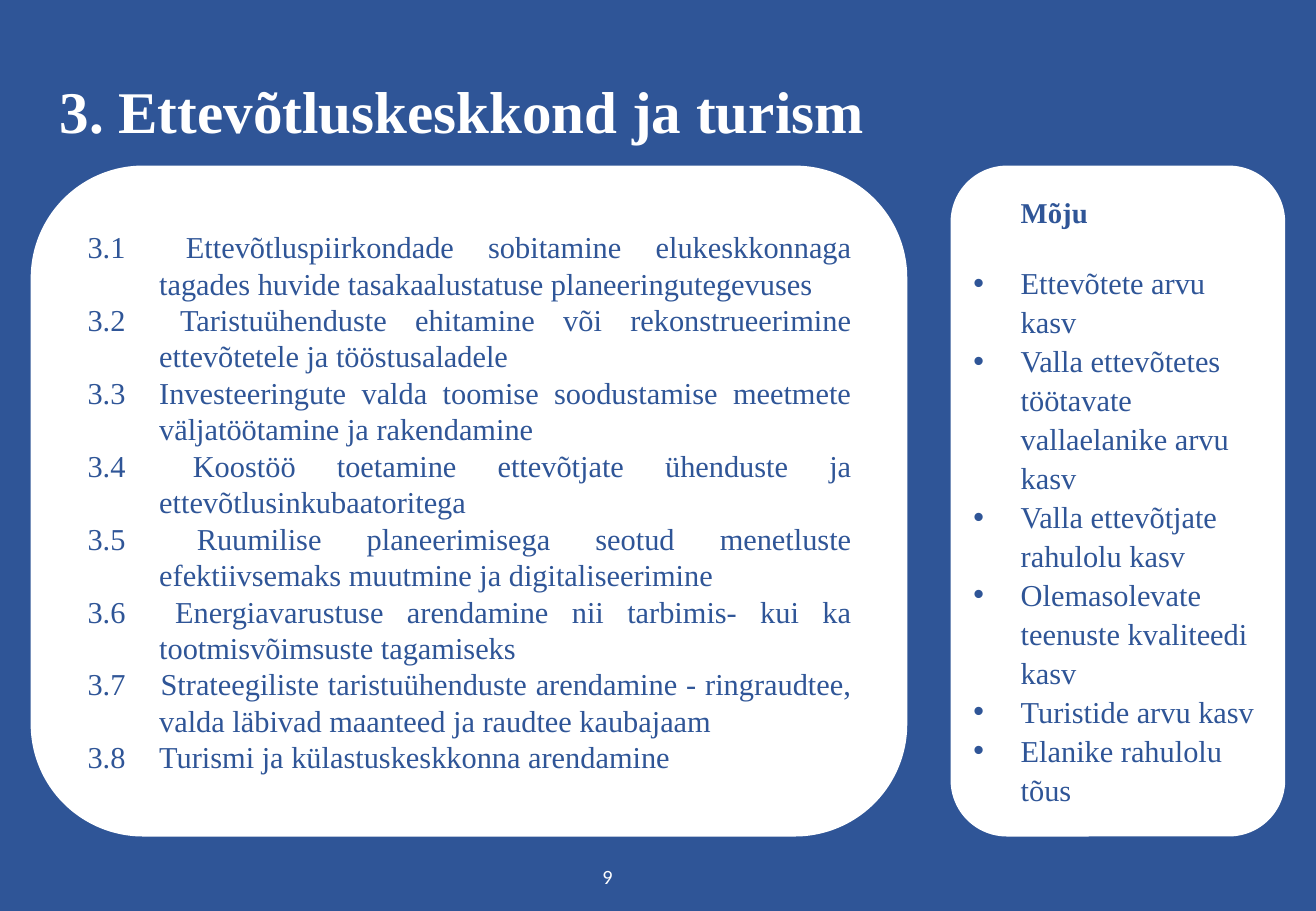
from dataclasses import dataclass

from lxml import etree
from pptx import Presentation
from pptx import util as u
from pptx.dml.color import RGBColor
from pptx.enum import shapes, text
from pptx.oxml import ns

BLUE = "2F5597"
WHITE = "FFFFFF"
SERIF = "Times New Roman"
PANEL_TOP = 1.37
PANEL_HEIGHT = 5.51


@dataclass
class Box:
    left: float
    top: float
    width: float
    height: float

    def lengths(self) -> tuple:
        return tuple(u.Inches(n) for n in (self.left, self.top, self.width, self.height))


@dataclass
class Line:
    words: str
    size: float = 18
    color: str = BLUE
    font: str = SERIF
    bold: bool = False
    align: text.PP_ALIGN = text.PP_ALIGN.LEFT
    indent: float = 0
    hanging: bool = False
    bullet: bool = False
    spacing: float = 1
    after: float = 0


@dataclass
class Panel:
    outline: Box
    words: Box
    lines: list[Line]


ACTIONS = [
    "3.1 \tEttevõtluspiirkondade sobitamine elukeskkonnaga tagades huvide tasakaalustatuse planeeringutegevuses",
    "3.2 \tTaristuühenduste ehitamine või rekonstrueerimine ettevõtetele ja tööstusaladele",
    "3.3\tInvesteeringute valda toomise soodustamise meetmete väljatöötamine ja rakendamine",
    "3.4 \tKoostöö toetamine ettevõtjate ühenduste ja ettevõtlusinkubaatoritega",
    "3.5 \tRuumilise planeerimisega seotud menetluste efektiivsemaks muutmine ja digitaliseerimine",
    "3.6 \tEnergiavarustuse arendamine nii tarbimis- kui ka tootmisvõimsuste tagamiseks",
    "3.7 \tStrateegiliste taristuühenduste arendamine - ringraudtee, valda läbivad maanteed ja raudtee kaubajaam",
    "3.8\tTurismi ja külastuskeskkonna arendamine",
]
IMPACTS = [
    "Ettevõtete arvu kasv",
    "Valla ettevõtetes töötavate vallaelanike arvu kasv",
    "Valla ettevõtjate rahulolu kasv",
    "Olemasolevate teenuste kvaliteedi kasv",
    "Turistide arvu kasv",
    "Elanike rahulolu tõus",
]

action_lines = [
    Line(action, align=text.PP_ALIGN.JUSTIFY, indent=0.59, hanging=True)
    for action in ACTIONS
]
impact_lines = [Line("Mõju", size=17, bold=True, indent=0.39, after=19.5)] + [
    Line(impact, indent=0.39, hanging=True, bullet=True, spacing=1.07)
    for impact in IMPACTS
]
impact_lines[-1].after = 8

PANELS = [
    Panel(Box(0.26, PANEL_TOP, 7.2, PANEL_HEIGHT), Box(0.67, 1.81, 6.39, 4.64), action_lines),
    Panel(Box(7.83, PANEL_TOP, 2.74, PANEL_HEIGHT), Box(7.96, 1.53, 2.48, 5.19), impact_lines),
]


def paint(color_format, color: str) -> None:
    color_format.rgb = RGBColor.from_string(color)


def format_paragraph(paragraph, line: Line) -> None:
    paragraph.text = line.words
    paragraph.alignment = line.align
    paragraph.line_spacing = line.spacing
    paragraph.space_before = u.Pt(0)
    paragraph.space_after = u.Pt(line.after)
    properties = paragraph._p.get_or_add_pPr()
    properties.set("marL", str(u.Inches(line.indent)))
    properties.set("indent", str(u.Inches(-line.indent if line.hanging else 0)))
    if line.bullet:
        etree.SubElement(properties, ns.qn("a:buFont"), typeface="Arial")
        etree.SubElement(properties, ns.qn("a:buChar"), char="•")
    font = paragraph.font
    font.name = line.font
    font.size = u.Pt(line.size)
    font.bold = line.bold
    paint(font.color, line.color)


def fill_text(shape, lines: list[Line], wrap: bool = True) -> None:
    frame = shape.text_frame
    frame.word_wrap = wrap
    frame.auto_size = text.MSO_AUTO_SIZE.NONE
    frame.vertical_anchor = text.MSO_ANCHOR.MIDDLE
    frame.margin_left = frame.margin_right = u.Inches(0.05)
    frame.margin_top = frame.margin_bottom = u.Inches(0.05)
    for index, line in enumerate(lines):
        paragraph = frame.add_paragraph() if index else frame.paragraphs[0]
        format_paragraph(paragraph, line)


def draw_panel(slide, panel: Panel) -> None:
    group = slide.shapes.add_group_shape()
    card = group.shapes.add_shape(
        shapes.MSO_SHAPE.ROUNDED_RECTANGLE, *panel.outline.lengths()
    )
    card.shadow.inherit = False
    card.fill.solid()
    paint(card.fill.fore_color, WHITE)
    paint(card.line.color, WHITE)
    card.line.width = u.Pt(1)
    fill_text(group.shapes.add_textbox(*panel.words.lengths()), panel.lines)


def main() -> None:
    presentation = Presentation()
    presentation.slide_width = u.Inches(10.83)
    presentation.slide_height = u.Inches(7.5)
    slide = presentation.slides.add_slide(presentation.slide_layouts.get_by_name("Title Only"))
    slide.background.fill.solid()
    paint(slide.background.fill.fore_color, BLUE)

    title = slide.shapes.title
    title.left, title.top, title.width, title.height = Box(0.44, 0.62, 9.94, 0.65).lengths()
    heading = Line("3. Ettevõtluskeskkond ja turism", size=35, color=WHITE, bold=True, spacing=0.9)
    fill_text(title, [heading])

    for panel in PANELS:
        draw_panel(slide, panel)

    page_number = slide.shapes.add_textbox(*Box(4.9, 7.07, 0.2, 0.29).lengths())
    page_line = Line("9", size=12, color=WHITE, font="Calibri", align=text.PP_ALIGN.CENTER)
    fill_text(page_number, [page_line], wrap=False)
    presentation.save("out.pptx")


if __name__ == "__main__":
    main()
